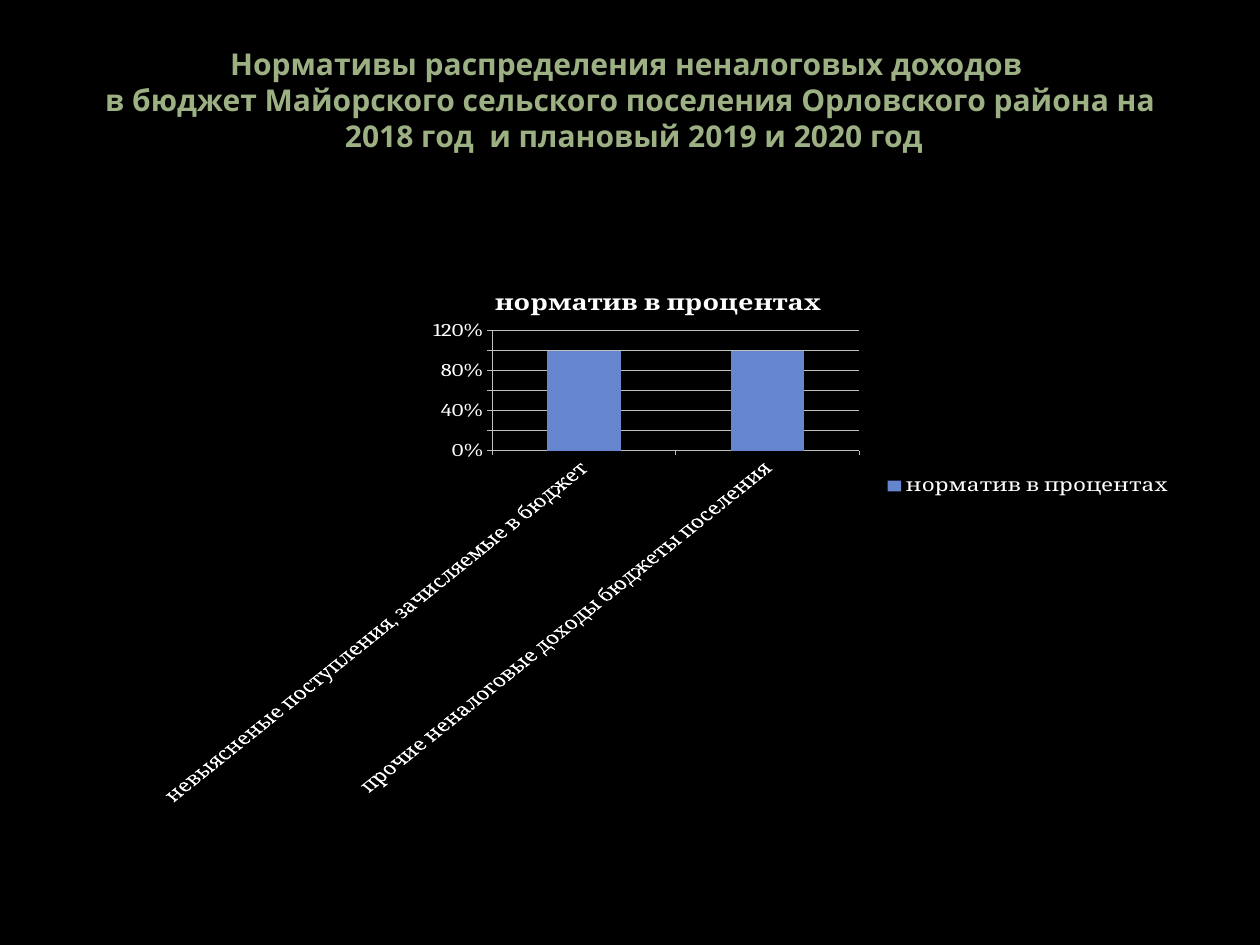
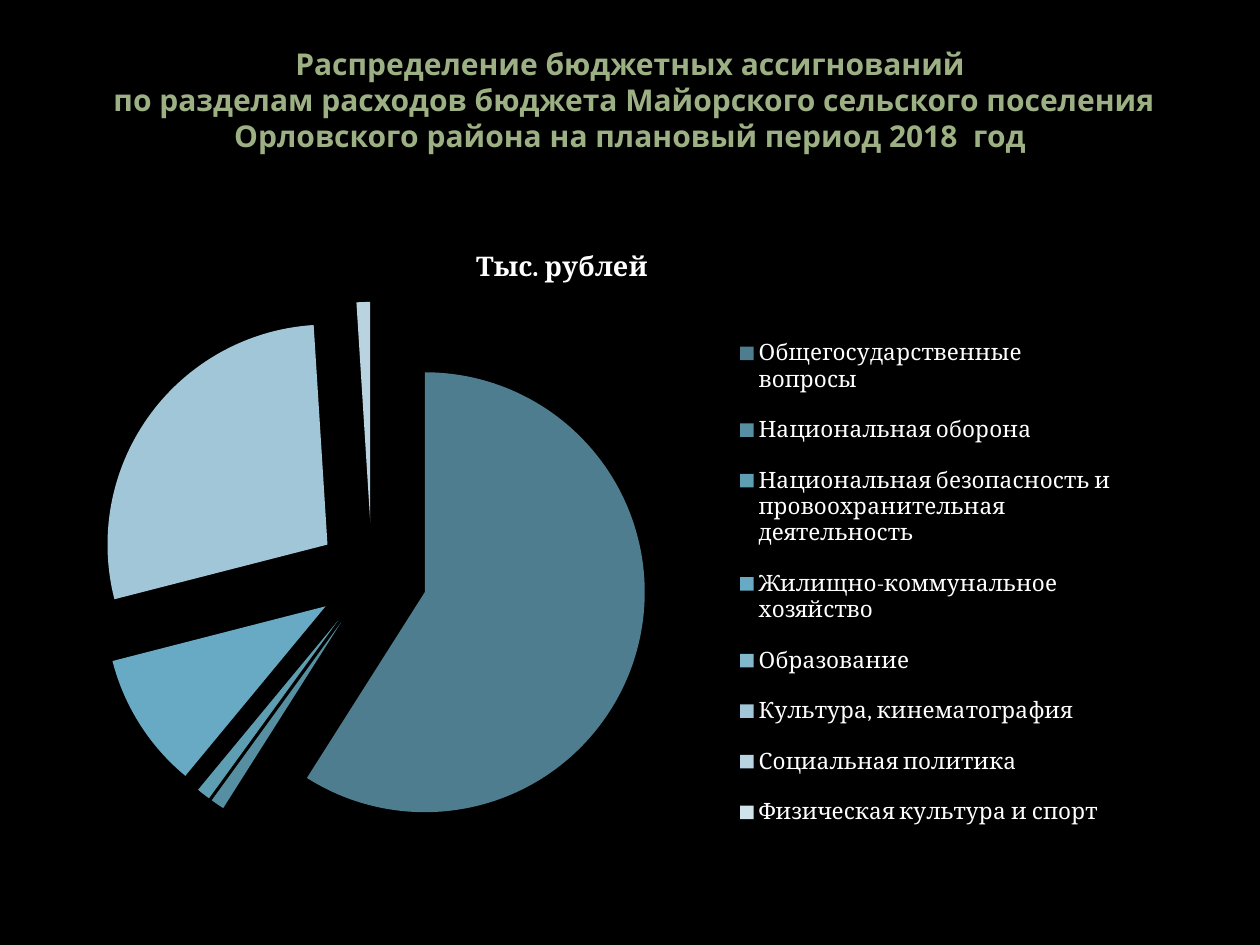
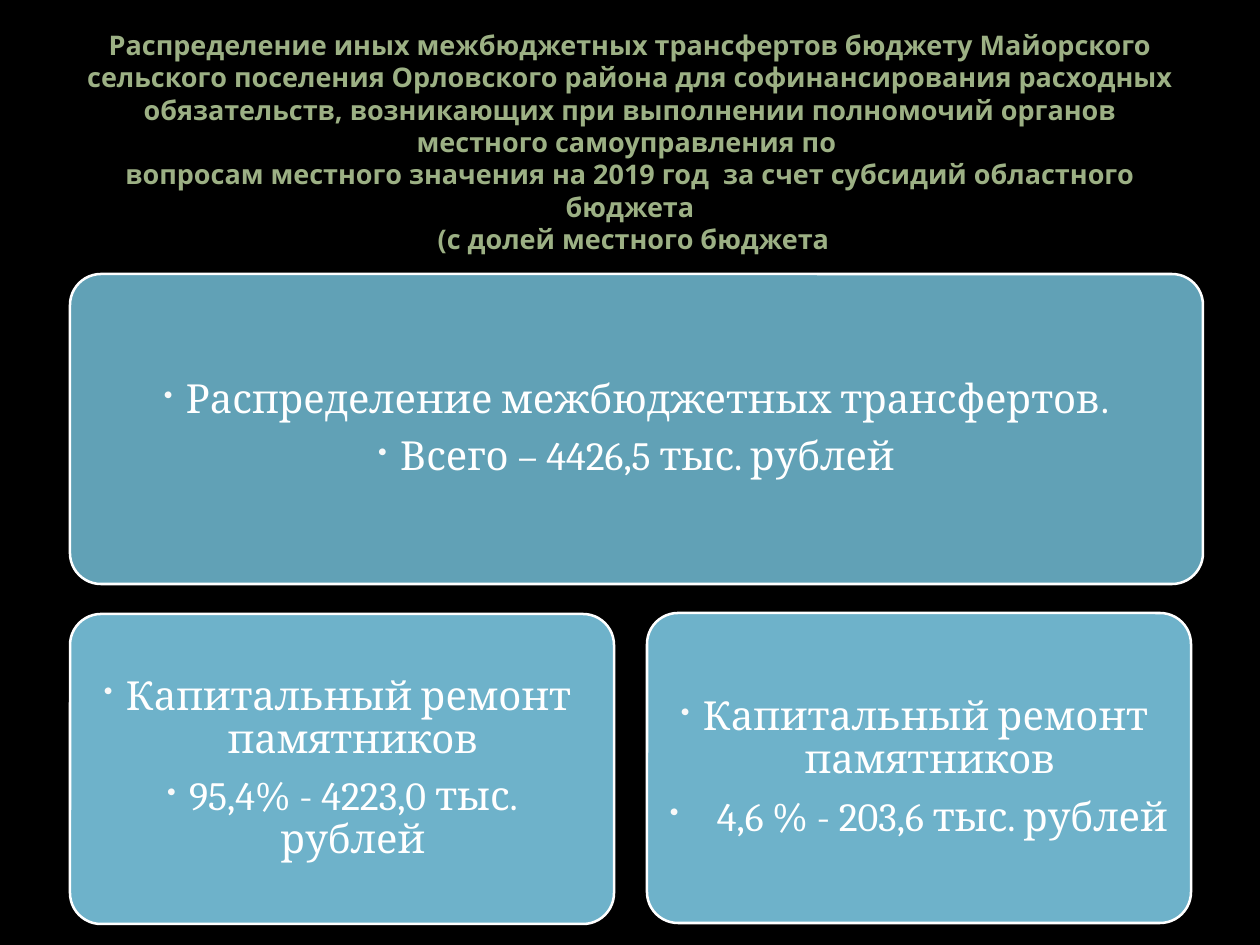
"""Build three budget slides: a column chart, an exploded pie and transfer cards."""
from dataclasses import dataclass

import lxml.etree
import pptx
import pptx.chart.chart
import pptx.chart.data
import pptx.dml.color
import pptx.enum.chart
import pptx.enum.shapes
import pptx.enum.text
import pptx.oxml.ns
import pptx.presentation
import pptx.shapes.autoshape
import pptx.slide
import pptx.text.text
import pptx.util

EMU_PER_PX = 10160
TITLE_FONT = "Open Sans"
BODY_FONT = "Cambria"
COLORS = {
    "background": "000000",
    "title": "9CB084",
    "text": "FFFFFF",
    "bullet": "F9F9F9",
    "grid": "C0C0C0",
    "column": "6585CF",
    "total": "61A1B6",
    "share": "6EB2CA",
}
SLICE_COLORS = ["4D7D8F", "568FA1", "5E9EB3", "68AAC3", "82B7CC", "A0C6D7", "B9D3E0", "D0E2EA"]


@dataclass(frozen=True)
class Box:
    """Position and size in px."""

    left: int
    top: int
    width: int
    height: int

    def emu(self) -> list[int]:
        """Return the four lengths in EMU."""
        return [px(length) for length in (self.left, self.top, self.width, self.height)]


@dataclass(frozen=True)
class Title:
    """Slide heading with its lines, box height and free space below."""

    lines: list[str]
    height: int = 157
    size: float = 24
    bottom_inset: int = 41


@dataclass(frozen=True)
class ChartSpec:
    """Chart type, place and data."""

    kind: pptx.enum.chart.XL_CHART_TYPE
    box: Box
    name: str
    values: dict[str, float]
    number_format: str


@dataclass(frozen=True)
class Bullet:
    """Card line and its hanging indent in px."""

    text: str
    indent: int = 22


@dataclass(frozen=True)
class Card:
    """Rounded card with bulleted lines."""

    box: Box
    fill: str
    bullets: list[Bullet]


COLUMN_TITLE = Title([
    "Нормативы распределения неналоговых доходов ",
    "в бюджет Майорского сельского поселения Орловского района на",
    " 2018 год  и плановый 2019 и 2020 год",
])
PIE_TITLE = Title([
    "Распределение бюджетных ассигнований",
    " по разделам расходов бюджета Майорского сельского поселения "
    "Орловского района на плановый период 2018  год",
])
CARDS_TITLE = Title([
    "Распределение иных межбюджетных трансфертов бюджету Майорского сельского поселения "
    "Орловского района для софинансирования расходных обязательств, возникающих при "
    "выполнении полномочий органов местного самоуправления по ",
    "вопросам местного значения на 2019 год  за счет субсидий областного бюджета",
    " (с долей местного бюджета",
], height=224, size=21.6, bottom_inset=7)

COLUMN_CHART = ChartSpec(
    pptx.enum.chart.XL_CHART_TYPE.COLUMN_STACKED,
    Box(134, 272, 1049, 534),
    "норматив в процентах",
    {
        "невыясненые поступления, зачисляемые в бюджет": 1,
        "прочие неналоговые доходы бюджеты поселения": 1,
    },
    "0%",
)
PIE_CHART = ChartSpec(
    pptx.enum.chart.XL_CHART_TYPE.PIE_EXPLODED,
    Box(0, 226, 1124, 639),
    "Тыс. рублей",
    {
        "Общегосударственные вопросы": 59,
        "Национальная оборона": 1,
        "Национальная безопасность и провоохранительная деятельность": 1,
        "Жилищно-коммунальное хозяйство": 10,
        "Образование": 0,
        "Культура, кинематография": 28,
        "Социальная политика": 1,
        "Физическая культура и спорт": 0,
    },
    "General",
)
PIE_PLOT = Box(97, 302, 550, 550)
PIE_LEGEND = Box(748, 316, 376, 534)
CARDS = [
    Card(Box(70, 274, 1133, 310), "total", [
        Bullet("Распределение межбюджетных трансфертов."),
        Bullet("Всего – 4426,5 тыс. рублей"),
    ]),
    Card(Box(70, 614, 544, 310), "share", [
        Bullet("Капитальный ремонт  памятников"),
        Bullet("95,4% - 4223,0 тыс. рублей"),
    ]),
    Card(Box(647, 613, 544, 310), "share", [
        Bullet("Капитальный ремонт  памятников"),
        Bullet("4,6 % - 203,6 тыс. рублей", indent=47),
    ]),
]


def px(length: int) -> int:
    """Convert px to EMU."""
    return length * EMU_PER_PX


def rgb(value: str) -> pptx.dml.color.RGBColor:
    """Convert a hex string to a colour."""
    return pptx.dml.color.RGBColor.from_string(value)


def style_font(font: pptx.text.text.Font, name: str, size: float, color: str, bold: bool = False) -> None:
    """Set face, size, colour and weight."""
    font.name = name
    font.size = pptx.util.Pt(size)
    font.bold = bold
    font.color.rgb = rgb(COLORS[color])


def set_insets(frame: pptx.text.text.TextFrame, side: int, top: int, bottom: int) -> None:
    """Set the text margins in px."""
    frame.margin_left = frame.margin_right = px(side)
    frame.margin_top, frame.margin_bottom = px(top), px(bottom)


def add_titled_slide(presentation: pptx.presentation.Presentation, title: Title) -> pptx.slide.Slide:
    """Add a title-only slide and fill its heading."""
    slide = presentation.slides.add_slide(presentation.slide_layouts.get_by_name("Title Only"))
    shape = slide.shapes.title
    shape.left, shape.top, shape.width, shape.height = Box(63, 38, 1134, title.height).emu()
    frame = shape.text_frame
    frame.word_wrap = True
    frame.auto_size = pptx.enum.text.MSO_AUTO_SIZE.NONE
    frame.vertical_anchor = pptx.enum.text.MSO_ANCHOR.BOTTOM
    set_insets(frame, 13, 6, title.bottom_inset)
    paragraph = frame.paragraphs[0]
    paragraph.alignment = pptx.enum.text.PP_ALIGN.CENTER
    paragraph.line_spacing = pptx.util.Pt(title.size * 1.2)
    for index, line in enumerate(title.lines):
        if index:
            paragraph.add_line_break()
        run = paragraph.add_run()
        run.text = line
        style_font(run.font, TITLE_FONT, title.size, "title", bold=True)
    return slide


def add_chart(slide: pptx.slide.Slide, spec: ChartSpec) -> pptx.chart.chart.Chart:
    """Add a chart with the shared fonts, title and legend."""
    data = pptx.chart.data.CategoryChartData(number_format=spec.number_format)
    data.categories = list(spec.values)
    data.add_series(spec.name, list(spec.values.values()))
    chart = slide.shapes.add_chart(spec.kind, *spec.box.emu(), data).chart
    style_font(chart.font, BODY_FONT, 18, "text")
    chart.has_title = True
    run = chart.chart_title.text_frame.paragraphs[0].add_run()
    run.text = spec.name
    style_font(run.font, BODY_FONT, 21.6, "text", bold=True)
    chart.chart_title.include_in_layout = False
    chart.has_legend = True
    chart.legend.position = pptx.enum.chart.XL_LEGEND_POSITION.RIGHT
    chart.legend.include_in_layout = False
    return chart


def format_columns(chart: pptx.chart.chart.Chart) -> None:
    """Colour the columns, axes and gridlines."""
    plot = chart.plots[0]
    plot.gap_width, plot.overlap = 150, 100
    plot.vary_by_categories = False
    fill = plot.series[0].format.fill
    fill.solid()
    fill.fore_color.rgb = rgb(COLORS["column"])
    chart.value_axis.has_major_gridlines = True
    chart.value_axis.tick_labels.number_format = "0%"
    chart.value_axis.tick_labels.number_format_is_linked = False
    for axis in (chart.category_axis, chart.value_axis):
        axis.major_tick_mark = pptx.enum.chart.XL_TICK_MARK.OUTSIDE
        axis.format.line.color.rgb = rgb(COLORS["grid"])
    chart.value_axis.major_gridlines.format.line.color.rgb = rgb(COLORS["grid"])


def build_layout(part: Box, whole: Box, inner: bool) -> lxml.etree._Element:
    """Describe a chart part's place as fractions of the chart."""
    qualify = pptx.oxml.ns.qn
    layout = lxml.etree.Element(qualify("c:layout"))
    manual = lxml.etree.SubElement(layout, qualify("c:manualLayout"))
    if inner:
        lxml.etree.SubElement(manual, qualify("c:layoutTarget"), val="inner")
    for mode in ("xMode", "yMode"):
        lxml.etree.SubElement(manual, qualify(f"c:{mode}"), val="edge")
    fractions = {
        "x": (part.left - whole.left) / whole.width,
        "y": (part.top - whole.top) / whole.height,
        "w": part.width / whole.width,
        "h": part.height / whole.height,
    }
    for name, fraction in fractions.items():
        lxml.etree.SubElement(manual, qualify(f"c:{name}"), val=f"{fraction:.4f}")
    return layout


def place_pie(chart: pptx.chart.chart.Chart) -> None:
    """Fix the places of the pie and its legend."""
    qualify = pptx.oxml.ns.qn
    plot_area = chart._chartSpace.chart.plotArea
    legend = chart.legend._element
    for parent in (plot_area, legend):
        for layout in parent.findall(qualify("c:layout")):
            parent.remove(layout)
    plot_area.insert(0, build_layout(PIE_PLOT, PIE_CHART.box, inner=True))
    legend.find(qualify("c:legendPos")).addnext(build_layout(PIE_LEGEND, PIE_CHART.box, inner=False))


def format_slices(chart: pptx.chart.chart.Chart) -> None:
    """Give each pie slice its shade."""
    chart.plots[0].vary_by_categories = True
    series = chart.plots[0].series[0]
    for index, color in enumerate(SLICE_COLORS):
        fill = series.points[index].format.fill
        fill.solid()
        fill.fore_color.rgb = rgb(color)


def add_bullet(paragraph: pptx.text.text._Paragraph, bullet: Bullet) -> None:
    """Write one centred line with a small hanging bullet."""
    paragraph.alignment = pptx.enum.text.PP_ALIGN.CENTER
    paragraph.line_spacing = 0.9
    paragraph.space_after = pptx.util.Pt(11.2)
    run = paragraph.add_run()
    run.text = bullet.text
    style_font(run.font, BODY_FONT, 32, "text")
    properties = paragraph._p.get_or_add_pPr()
    properties.set("marL", str(px(bullet.indent)))
    properties.set("indent", str(-px(bullet.indent)))
    qualify = pptx.oxml.ns.qn
    color = lxml.etree.SubElement(properties, qualify("a:buClr"))
    lxml.etree.SubElement(color, qualify("a:srgbClr"), val=COLORS["bullet"])
    lxml.etree.SubElement(properties, qualify("a:buSzPct"), val="65000")
    lxml.etree.SubElement(properties, qualify("a:buChar"), char="•")


def add_card(slide: pptx.slide.Slide, card: Card) -> pptx.shapes.autoshape.Shape:
    """Draw a rounded card with its lines."""
    shape = slide.shapes.add_shape(pptx.enum.shapes.MSO_SHAPE.ROUNDED_RECTANGLE, *card.box.emu())
    shape.adjustments[0] = 0.1
    shape.shadow.inherit = False
    shape.fill.solid()
    shape.fill.fore_color.rgb = rgb(COLORS[card.fill])
    shape.line.color.rgb = rgb(COLORS["text"])
    shape.line.width = pptx.util.Pt(2)
    frame = shape.text_frame
    frame.word_wrap = True
    frame.vertical_anchor = pptx.enum.text.MSO_ANCHOR.MIDDLE
    set_insets(frame, 12, 12, 12)
    for index, bullet in enumerate(card.bullets):
        add_bullet(frame.add_paragraph() if index else frame.paragraphs[0], bullet)
    return shape


def main() -> None:
    """Build and save the slides."""
    presentation = pptx.Presentation()
    presentation.slide_width, presentation.slide_height = px(1260), px(945)
    background = presentation.slide_master.background.fill
    background.solid()
    background.fore_color.rgb = rgb(COLORS["background"])
    format_columns(add_chart(add_titled_slide(presentation, COLUMN_TITLE), COLUMN_CHART))
    pie_chart = add_chart(add_titled_slide(presentation, PIE_TITLE), PIE_CHART)
    format_slices(pie_chart)
    place_pie(pie_chart)
    cards_slide = add_titled_slide(presentation, CARDS_TITLE)
    for card in CARDS:
        add_card(cards_slide, card)
    presentation.save("out.pptx")


if __name__ == "__main__":
    main()
